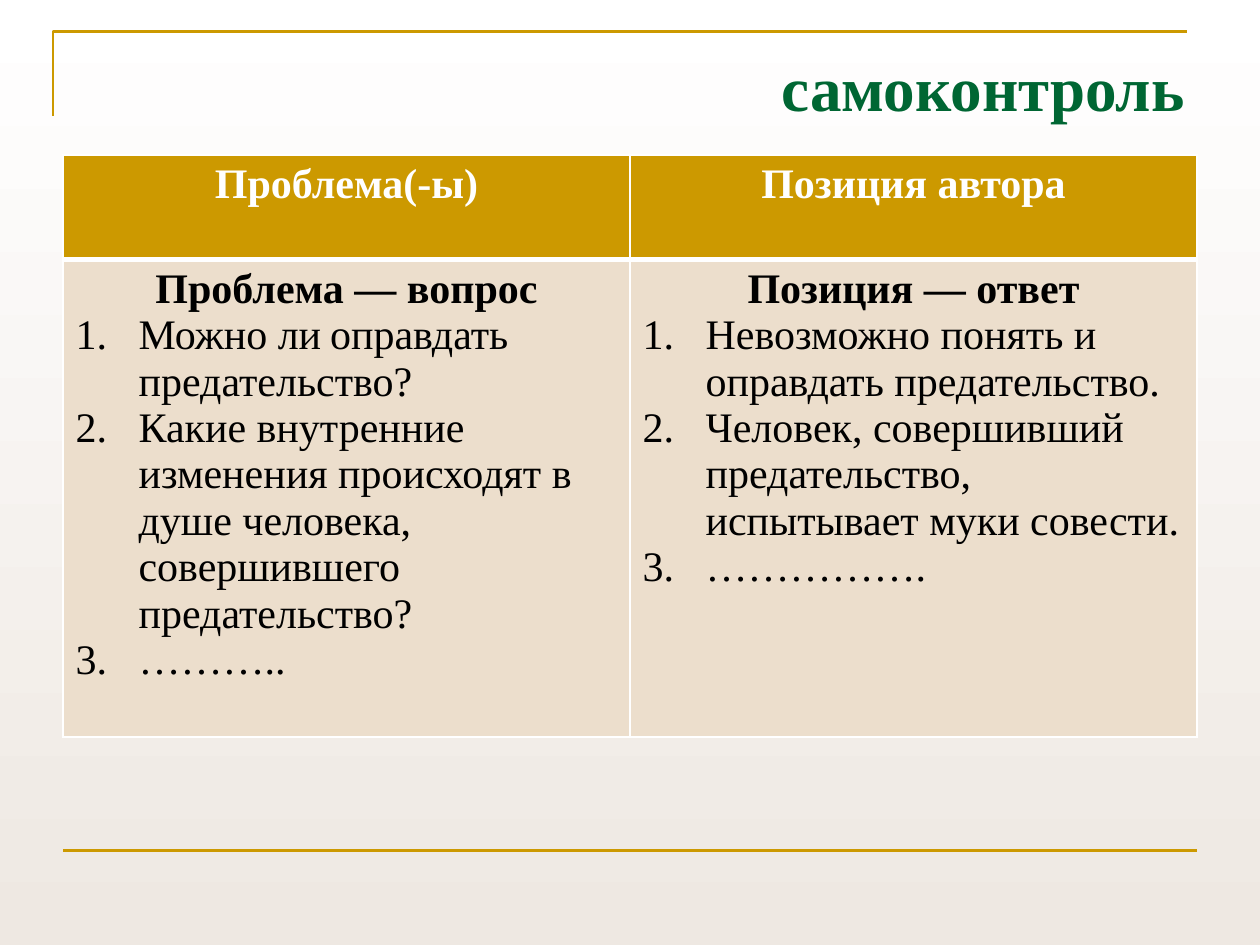
from dataclasses import dataclass

from lxml.etree import SubElement
from pptx import Presentation
from pptx.dml.color import RGBColor
from pptx.enum.shapes import MSO_CONNECTOR
from pptx.enum.text import MSO_ANCHOR, PP_ALIGN
from pptx.oxml.ns import qn
from pptx.util import Inches, Pt


@dataclass(frozen=True)
class Theme:
    gold: RGBColor = RGBColor.from_string("CC9900")
    green: RGBColor = RGBColor.from_string("006633")
    sand: RGBColor = RGBColor.from_string("ECDECC")
    white: RGBColor = RGBColor.from_string("FFFFFF")
    black: RGBColor = RGBColor.from_string("000000")
    haze: RGBColor = RGBColor.from_string("EEE8E2")
    font: str = "Times New Roman"
    space_font: str = "Arial"
    title_size: int = 36
    table_size: int = 24
    space_size: int = 18
    rule_width: float = 1.5
    border_width: int = 1
    header_border_width: int = 3


@dataclass(frozen=True)
class Column:
    header: str
    heading: str
    items: tuple[tuple[str, ...], ...]


THEME = Theme()
COLUMNS = (
    Column("Проблема(-ы)", "Проблема — вопрос", (
        ("Можно ли", " ", "оправдать предательство?"),
        ("Какие внутренние изменения происходят в душе человека, совершившего предательство?",),
        ("………..",),
    )),
    Column("Позиция автора", "Позиция — ответ", (
        ("Невозможно понять и оправдать предательство.",),
        ("Человек, совершивший предательство, испытывает муки совести.",),
        ("…………….",),
    )),
)


def add_run(paragraph, text: str, color: RGBColor, bold: bool = False,
            size: int = THEME.table_size, font: str = THEME.font) -> None:
    run = paragraph.add_run()
    run.text = text
    run.font.name = font
    run.font.size = Pt(size)
    run.font.bold = bold
    run.font.color.rgb = color


def add_numbered_item(frame, parts: tuple[str, ...]) -> None:
    item = frame.add_paragraph()
    properties = item._p.get_or_add_pPr()
    properties.set("marL", str(Inches(0.5)))
    properties.set("indent", str(Inches(-0.5)))
    SubElement(properties, qn("a:buAutoNum"), type="arabicPeriod")
    for part in parts:
        if part.isspace():
            add_run(item, part, THEME.black, size=THEME.space_size, font=THEME.space_font)
        else:
            add_run(item, part, THEME.black)


def style_cell(cell, fill: RGBColor, top_width: int, bottom_width: int) -> None:
    widths = {"lnL": THEME.border_width, "lnR": THEME.border_width,
              "lnT": top_width, "lnB": bottom_width}
    properties = cell._tc.get_or_add_tcPr()
    for side, width in widths.items():
        border = SubElement(properties, qn(f"a:{side}"), w=str(Pt(width)))
        border_fill = SubElement(border, qn("a:solidFill"))
        SubElement(border_fill, qn("a:srgbClr"), val=str(THEME.white))
    cell.fill.solid()
    cell.fill.fore_color.rgb = fill


def add_centered_text(cell, text: str, color: RGBColor) -> None:
    heading = cell.text_frame.paragraphs[0]
    heading.alignment = PP_ALIGN.CENTER
    add_run(heading, text, color, bold=True)


def paint_background(slide) -> None:
    fill = slide.background.fill
    fill.gradient()
    fill.gradient_angle = 270
    for stop, color in zip(fill.gradient_stops, (THEME.white, THEME.haze)):
        stop.color.rgb = color


def add_frame_rules(slide) -> None:
    builder = slide.shapes.build_freeform(Inches(0.42), Inches(0.92))
    builder.add_line_segments(
        [(Inches(0.42), Inches(0.25)), (Inches(9.42), Inches(0.25))], close=False)
    corner = builder.convert_to_shape()
    corner.shadow.inherit = False
    corner.fill.background()
    footer_rule = slide.shapes.add_connector(
        MSO_CONNECTOR.STRAIGHT, Inches(0.5), Inches(6.75), Inches(9.5), Inches(6.75))
    SubElement(footer_rule._element.spPr, qn("a:effectLst"))
    for rule in (corner, footer_rule):
        rule.line.color.rgb = THEME.gold
        rule.line.width = Pt(THEME.rule_width)


def add_title(slide, text: str) -> None:
    title = slide.shapes.add_textbox(Inches(0.5), Inches(0.3), Inches(9), Inches(0.77))
    frame = title.text_frame
    frame.word_wrap = True
    frame.vertical_anchor = MSO_ANCHOR.MIDDLE
    frame.paragraphs[0].alignment = PP_ALIGN.RIGHT
    add_run(frame.paragraphs[0], text, THEME.green, bold=True, size=THEME.title_size)


def add_comparison(slide, columns: tuple[Column, ...]) -> None:
    row_heights = (Inches(0.83), Inches(3.79))
    table = slide.shapes.add_table(
        len(row_heights), len(columns), Inches(0.5), Inches(1.23),
        Inches(9), sum(row_heights)).table
    for row, height in zip(table.rows, row_heights):
        row.height = height
    for index, column in enumerate(columns):
        header, body = table.cell(0, index), table.cell(1, index)
        style_cell(header, THEME.gold, THEME.border_width, THEME.header_border_width)
        style_cell(body, THEME.sand, THEME.header_border_width, THEME.border_width)
        add_centered_text(header, column.header, THEME.white)
        add_centered_text(body, column.heading, THEME.black)
        for parts in column.items:
            add_numbered_item(body.text_frame, parts)


def main() -> None:
    presentation = Presentation()
    presentation.slide_width = Inches(10)
    presentation.slide_height = Inches(7.5)
    slide = presentation.slides.add_slide(presentation.slide_layouts[6])
    paint_background(slide)
    add_frame_rules(slide)
    add_title(slide, "самоконтроль")
    add_comparison(slide, COLUMNS)
    presentation.save("out.pptx")


if __name__ == "__main__":
    main()
